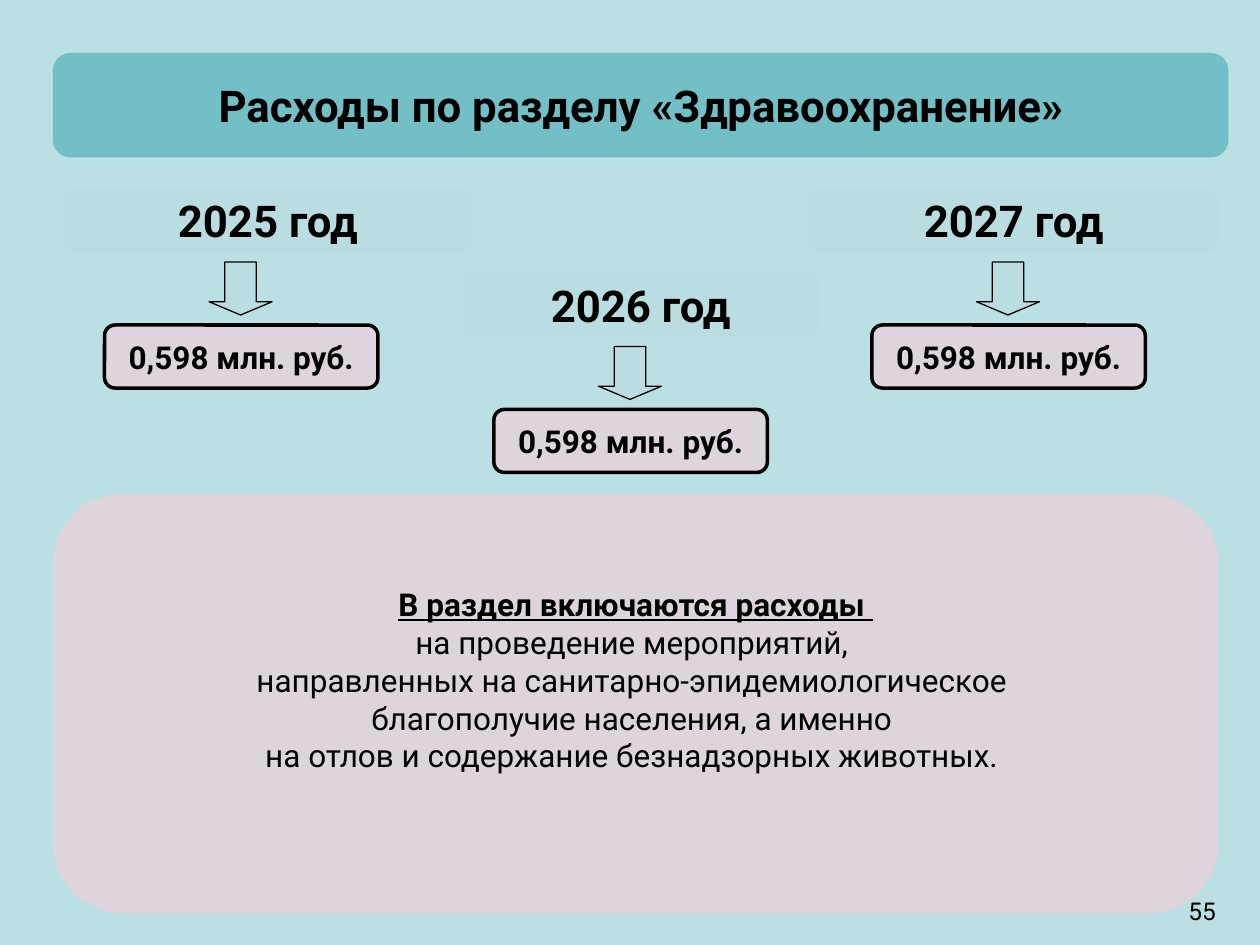
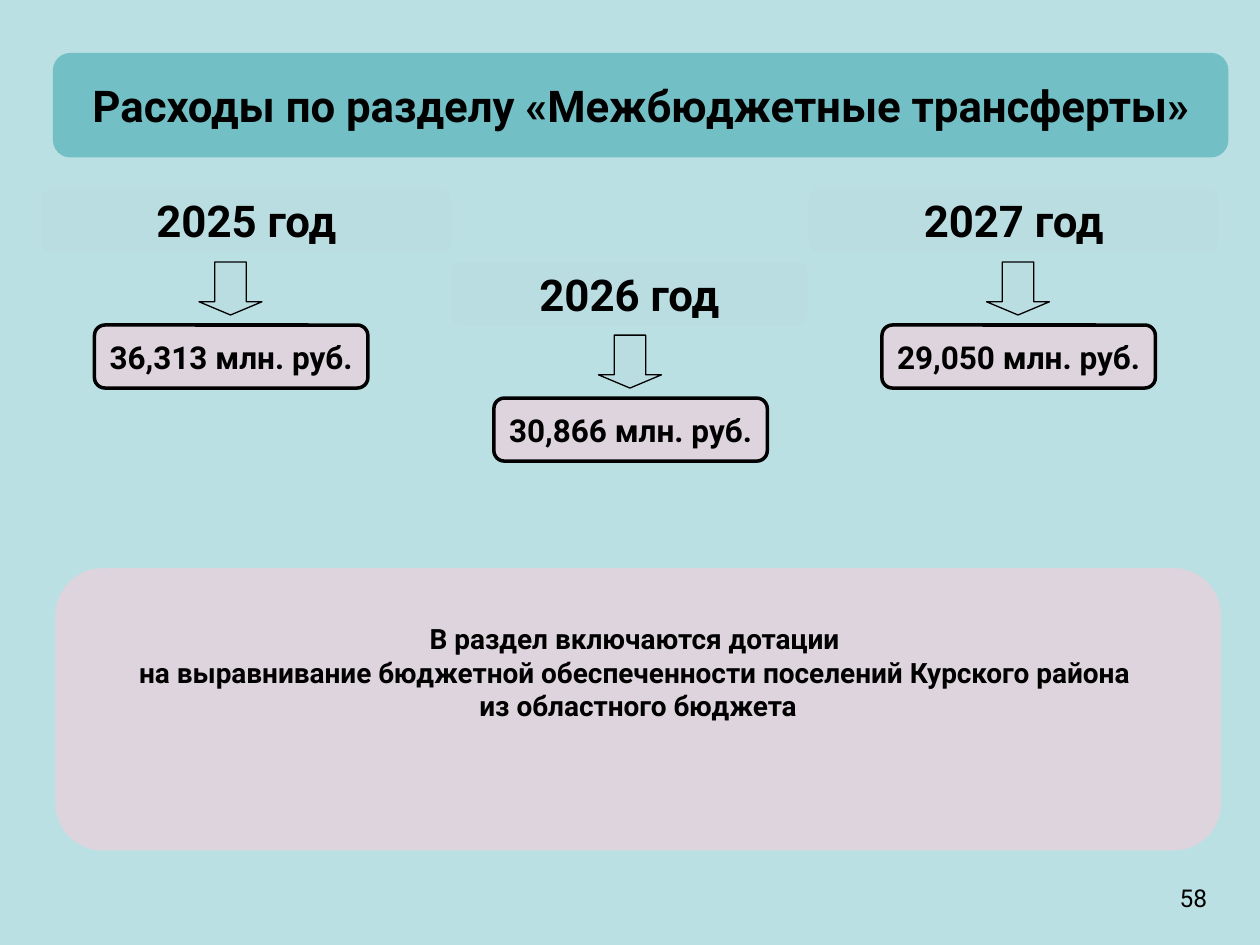
from pptx import Presentation
from pptx import util as u
from pptx.dml.color import RGBColor
from pptx.enum import shapes, text

FONT = "Roboto"
COLORS = {
    "background": "BBE0E3",
    "band": "72BFC5",
    "year": "BADDE1",
    "panel": "DED4DD",
    "ink": "000000",
}
ROUND, ARROW = shapes.MSO_SHAPE.ROUNDED_RECTANGLE, shapes.MSO_SHAPE.DOWN_ARROW
CENTER, RIGHT = text.PP_ALIGN.CENTER, text.PP_ALIGN.RIGHT

# Year blocks: year, (left, top, width) of the heading, left of the amount, amount
# Panel lines: text, bold, underline
SLIDES = [
    {
        "title": "Расходы по разделу «Здравоохранение»",
        "years": [
            ("2025 год", (0.5, 1.5, 3.25), 0.83, "0,598 млн. руб."),
            ("2026 год", (3.67, 2.17, 2.83), 3.92, "0,598 млн. руб."),
            ("2027 год", (6.42, 1.5, 3.25), 6.92, "0,598 млн. руб."),
        ],
        "panel": (0.42, 3.92, 9.25, 3.33),
        "panel_size": 18,
        "panel_bottom": 0.43,
        "lines": [
            ("В раздел включаются расходы ", True, True),
            ("на проведение мероприятий, ", False, False),
            ("направленных на санитарно-эпидемиологическое ", False, False),
            ("благополучие населения, а именно ", False, False),
            ("на отлов и содержание безнадзорных животных. ", False, False),
        ],
        "number": "55",
        "number_at": (7.42, 7.06),
    },
    {
        "title": "Расходы по разделу «Межбюджетные трансферты»",
        "years": [
            ("2025 год", (0.33, 1.5, 3.25), 0.75, "36,313 млн. руб."),
            ("2026 год", (3.58, 2.08, 2.83), 3.92, "30,866 млн. руб."),
            ("2027 год", (6.42, 1.5, 3.25), 7, "29,050 млн. руб."),
        ],
        "panel": (0.44, 4.51, 9.25, 2.24),
        "panel_size": 16,
        "panel_bottom": 0.64,
        "lines": [
            ("В раздел включаются дотации ", True, False),
            ("на выравнивание бюджетной обеспеченности поселений Курского района ", True, False),
            ("из областного бюджета", True, False),
        ],
        "number": "58",
        "number_at": (7.35, 6.96),
    },
]


def add_box(s, kind, at, fill, line=0):
    sp = s.shapes.add_shape(kind, *[u.Inches(v) for v in at])
    sp.shadow.inherit = False
    sp.fill.solid()
    sp.fill.fore_color.rgb = RGBColor.from_string(COLORS[fill])
    if line:
        sp.line.color.rgb = RGBColor.from_string(COLORS["ink"])
        sp.line.width = u.Pt(line)
    else:
        sp.line.fill.background()
    if kind == ARROW:
        sp.adjustments[1] = 0.25
    return sp


def write(sp, lines, size, align=CENTER, anchor=text.MSO_ANCHOR.MIDDLE, wrap=False):
    tf = sp.text_frame
    tf.auto_size = text.MSO_AUTO_SIZE.NONE
    tf.word_wrap = wrap
    tf.vertical_anchor = anchor
    for i, (words, bold, underline) in enumerate(lines):
        p = tf.add_paragraph() if i else tf.paragraphs[0]
        p.alignment = align
        r = p.add_run()
        r.text = words
        r.font.name = FONT
        r.font.size = u.Pt(size)
        r.font.bold = bold
        r.font.underline = underline
        r.font.color.rgb = RGBColor.from_string(COLORS["ink"])


prs = Presentation()
prs.slide_width, prs.slide_height = u.Inches(10), u.Inches(7.5)

# Shared background
bg = prs.slide_master.background.fill
bg.solid()
bg.fore_color.rgb = RGBColor.from_string(COLORS["background"])

for data in SLIDES:
    s = prs.slides.add_slide(prs.slide_layouts[5])

    # Title over its band, which goes to the back
    band = add_box(s, ROUND, (0.42, 0.42, 9.33, 0.83), "band")
    s.shapes._spTree.insert(2, band._element)
    title = s.shapes.title
    title.left, title.top = band.left, band.top
    title.width, title.height = band.width, band.height
    write(title, [(data["title"], True, False)], 25)

    # Year, arrow and amount, stacked
    for year, (left, top, width), amount_left, amount in data["years"]:
        sp = add_box(s, ROUND, (left, top, width, 0.5), "year")
        write(sp, [(year, True, False)], 25)
        add_box(s, ARROW, (amount_left + 0.83, top + 0.58, 0.5, 0.42), "year", 0.75)
        sp = add_box(s, ROUND, (amount_left, top + 1.08, 2.17, 0.5), "panel", 2)
        write(sp, [(amount, True, False)], 18)

    # Explanation panel
    sp = add_box(s, ROUND, data["panel"], "panel")
    sp.text_frame.margin_bottom = u.Inches(data["panel_bottom"])
    write(sp, data["lines"], data["panel_size"])

    # Page number
    x, y = data["number_at"]
    sp = s.shapes.add_textbox(u.Inches(x), u.Inches(y), u.Inches(2.33), u.Inches(0.52))
    write(sp, [(data["number"], False, False)], 14, RIGHT, text.MSO_ANCHOR.TOP, True)

prs.save("out.pptx")
